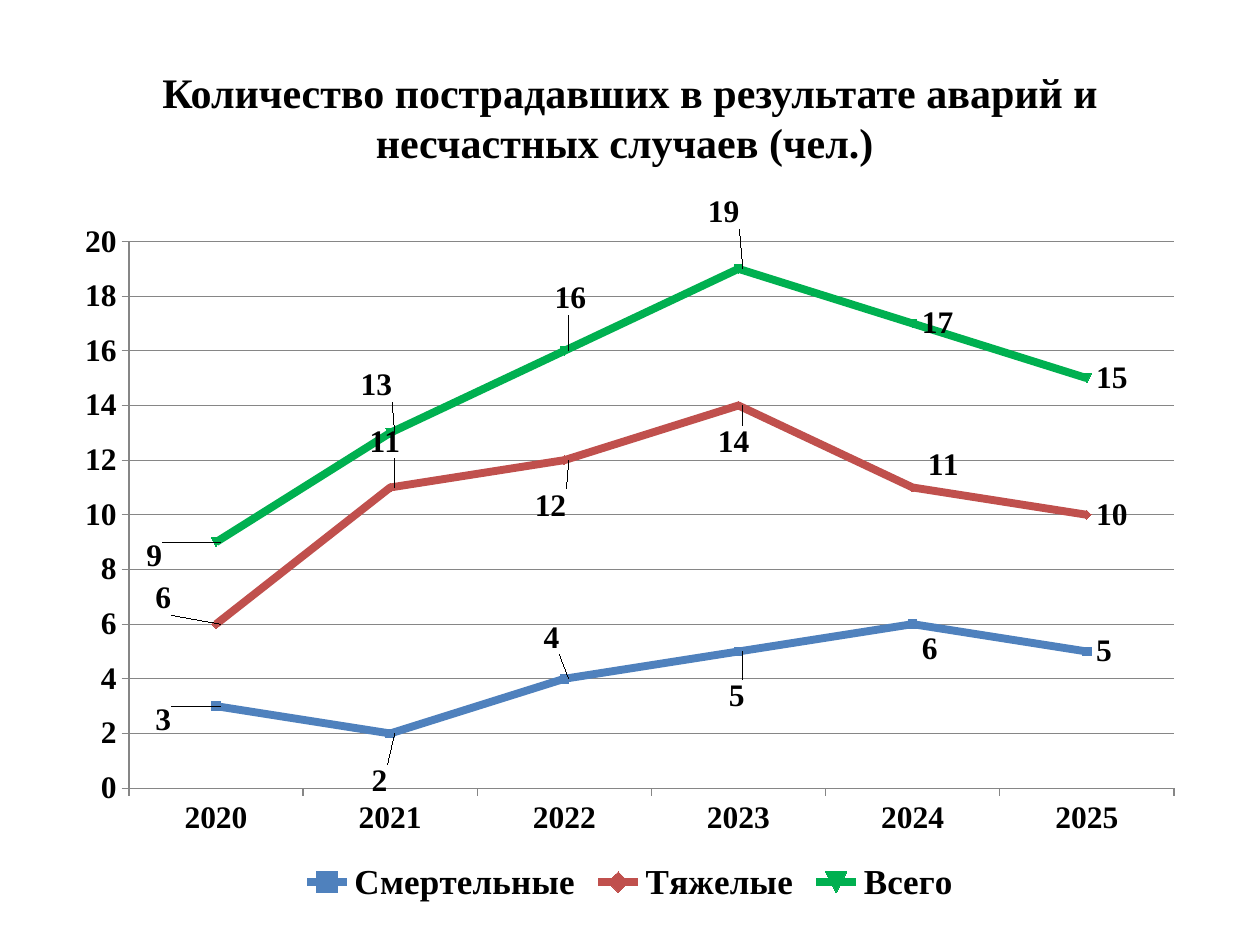
import pptx
import pptx.chart.data
import pptx.dml.color
import pptx.enum.chart
import pptx.enum.text
import pptx.oxml
import pptx.oxml.ns
import pptx.util

# Content
TITLE = "Количество пострадавших в результате аварий и несчастных случаев (чел.) "
YEARS = ["2020", "2021", "2022", "2023", "2024", "2025"]
BLUE = pptx.dml.color.RGBColor(0x4F, 0x81, 0xBD)
RED = pptx.dml.color.RGBColor(0xC0, 0x50, 0x4D)
GREEN = pptx.dml.color.RGBColor(0x00, 0xB0, 0x50)
BLACK = pptx.dml.color.RGBColor(0, 0, 0)
GRAY = pptx.dml.color.RGBColor(0x86, 0x86, 0x86)
FONT = "Times New Roman"

# Name, colour, values, label shifts (px) from the place right of each point
SERIES = [
    ("Смертельные", BLUE, [3, 2, 4, 5, 6, 5],
     [(-70, 14), (-28, 48), (-30, -41), (-19, 45), (0, 25)]),
    ("Тяжелые", RED, [6, 11, 12, 14, 11, 10],
     [(-70, -26), (-30, -46), (-39, 46), (-30, 37), (6, -23)]),
    ("Всего", GREEN, [9, 13, 16, 19, 17, 15],
     [(-79, 14), (-39, -48), (-19, -53), (-40, -57)]),
]

# Geometry in px: left, top, width, height
SCALE = 914400 / 126
SLIDE_SIZE = (1260, 945)
TITLE_BOX = (63, 38, 1134, 157)
CHART_BOX = (63, 195, 1134, 714)
PLOT_BOX = (66, 45, 1045, 548)  # inside the chart


def emu(*lengths):
    return [pptx.util.Emu(round(length * SCALE)) for length in lengths]


def set_font(font, size):
    font.name = FONT
    font.size = pptx.util.Pt(size)
    font.bold = True
    font.color.rgb = BLACK


def manual_layout(**settings):
    items = "".join(f'<c:{tag} val="{value}"/>' for tag, value in settings.items())
    return pptx.oxml.parse_xml(
        f'<c:layout {pptx.oxml.ns.nsdecls("c")}>'
        f"<c:manualLayout>{items}</c:manualLayout></c:layout>")


def share(x, y):
    """Turn px into fractions of the chart's width and height."""
    return round(x / CHART_BOX[2], 4), round(y / CHART_BOX[3], 4)


def style_series(series, color, shifts):
    series.smooth = False
    series.format.line.color.rgb = color
    series.format.line.width = pptx.util.Pt(4.5)
    series.marker.style = pptx.enum.chart.XL_MARKER_STYLE.AUTOMATIC
    series.marker.size = 5
    series.marker.format.fill.solid()
    series.marker.format.fill.fore_color.rgb = color
    series.marker.format.line.color.rgb = color

    labels = series.data_labels
    labels.show_value = True
    labels.position = pptx.enum.chart.XL_LABEL_POSITION.RIGHT
    set_font(labels.font, 18)
    for index in range(len(shifts)):
        label = series.points[index].data_label
        label.position = pptx.enum.chart.XL_LABEL_POSITION.RIGHT
        set_font(label.font, 18)
    elements = labels._element.findall(pptx.oxml.ns.qn("c:dLbl"))
    for element, shift in zip(elements, shifts):
        x, y = share(*shift)
        element.insert(1, manual_layout(x=x, y=y))


def add_title(slide):
    frame = slide.shapes.add_textbox(*emu(*TITLE_BOX)).text_frame
    frame.word_wrap = True
    frame.vertical_anchor = pptx.enum.text.MSO_ANCHOR.MIDDLE
    paragraph = frame.paragraphs[0]
    paragraph.alignment = pptx.enum.text.PP_ALIGN.CENTER
    run = paragraph.add_run()
    run.text = TITLE
    set_font(run.font, 24)


def add_line_chart(slide):
    data = pptx.chart.data.CategoryChartData()
    data.categories = YEARS
    for name, _, values, _ in SERIES:
        data.add_series(name, values)
    chart = slide.shapes.add_chart(
        pptx.enum.chart.XL_CHART_TYPE.LINE_MARKERS, *emu(*CHART_BOX), data).chart
    chart.has_title = False
    set_font(chart.font, 18)

    # Plot area
    plot_area = chart._chartSpace.chart.plotArea
    for old in plot_area.findall(pptx.oxml.ns.qn("c:layout")):
        plot_area.remove(old)
    x, y = share(*PLOT_BOX[:2])
    w, h = share(*PLOT_BOX[2:])
    plot_area.insert(0, manual_layout(
        layoutTarget="inner", xMode="edge", yMode="edge", x=x, y=y, w=w, h=h))
    chart.plots[0].vary_by_categories = False

    # Axes
    value_axis = chart.value_axis
    value_axis.minimum_scale, value_axis.maximum_scale = 0, 20
    value_axis.major_unit = 2
    value_axis.has_major_gridlines = True
    for axis in (chart.category_axis, value_axis):
        axis.major_tick_mark = pptx.enum.chart.XL_TICK_MARK.OUTSIDE
        axis.minor_tick_mark = pptx.enum.chart.XL_TICK_MARK.NONE
        set_font(axis.tick_labels.font, 18)
    for part in (chart.category_axis, value_axis, value_axis.major_gridlines):
        part.format.line.color.rgb = GRAY
        part.format.line.width = pptx.util.Pt(0.75)

    # Legend
    chart.has_legend = True
    chart.legend.position = pptx.enum.chart.XL_LEGEND_POSITION.BOTTOM
    chart.legend.include_in_layout = False
    set_font(chart.legend.font, 20)

    for series, (_, color, _, shifts) in zip(chart.plots[0].series, SERIES):
        style_series(series, color, shifts)


def main():
    presentation = pptx.Presentation()
    presentation.slide_width, presentation.slide_height = emu(*SLIDE_SIZE)
    slide = presentation.slides.add_slide(presentation.slide_layouts[6])
    add_title(slide)
    add_line_chart(slide)
    presentation.save("out.pptx")


if __name__ == "__main__":
    main()
